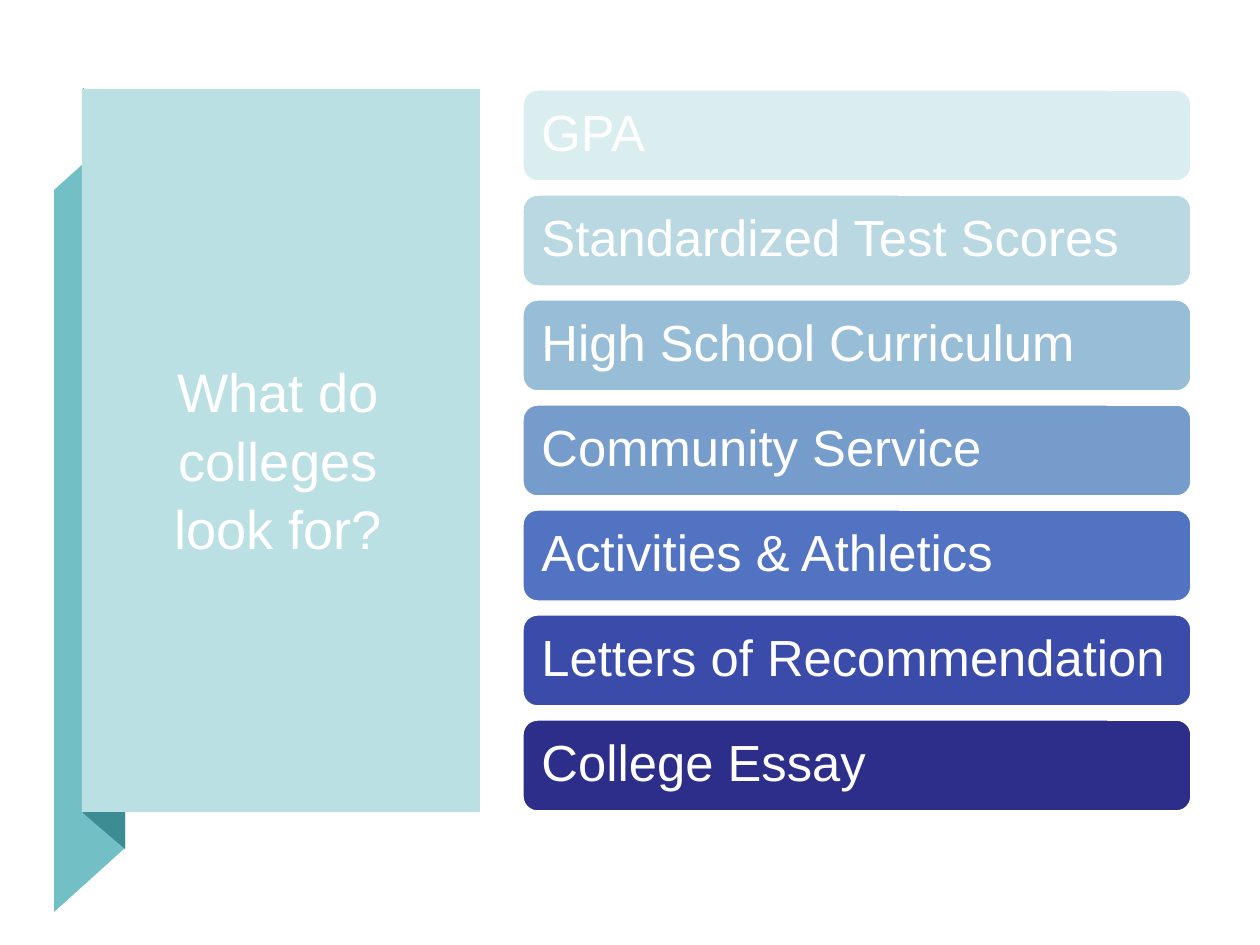
import pptx
import pptx.dml.color
import pptx.enum.shapes
import pptx.enum.text
import pptx.util

PX = 914400 / 126
THEME = {
    "font": "Arial", "title_size": 31, "bar_size": 29,
    "text": "FFFFFF", "panel": "BBE0E3", "ribbon": "72BFC5", "fold": "3C8C93",
    "bars": ["DAEDEF", "B9D8E2", "98BDD6", "759CCB", "5273C1", "3A4BAA", "2D2D8A"],
}
SHAPES = pptx.enum.shapes.MSO_SHAPE
ALIGN = pptx.enum.text.PP_ALIGN


def paint(shape, color, outline=None):
    shape.shadow.inherit = False
    shape.fill.solid()
    shape.fill.fore_color.rgb = pptx.dml.color.RGBColor.from_string(color)
    if outline:
        shape.line.color.rgb = pptx.dml.color.RGBColor.from_string(outline)
        shape.line.width = pptx.util.Pt(2)
    else:
        shape.line.fill.background()


def write(shape, text, size, inset, paragraph_format):
    frame = shape.text_frame
    frame_format = {"word_wrap": True, "vertical_anchor": pptx.enum.text.MSO_ANCHOR.MIDDLE}
    for side in ("left", "right", "top", "bottom"):
        frame_format[f"margin_{side}"] = round(inset * PX)
    for name, value in frame_format.items():
        setattr(frame, name, value)
    paragraph = frame.paragraphs[0]
    for name, value in paragraph_format.items():
        setattr(paragraph, name, value)
    run = paragraph.add_run()
    run.text = text
    for name, value in {"name": THEME["font"], "size": pptx.util.Pt(size)}.items():
        setattr(run.font, name, value)
    run.font.color.rgb = pptx.dml.color.RGBColor.from_string(THEME["text"])


presentation = pptx.Presentation()
presentation.slide_width = round(1260 * PX)
presentation.slide_height = round(945 * PX)
slide = presentation.slides.add_slide(presentation.slide_layouts[6])

# Folded ribbon behind the panel
ribbon_parts = [
    ("ribbon", [(54, 912), (125, 848), (125, 126), (54, 190)]),
    ("fold", [(83, 813), (125, 849), (125, 125), (83, 88)]),
]
for color, points in ribbon_parts:
    builder = slide.shapes.build_freeform(*points[0], scale=PX)
    builder.add_line_segments(points[1:], close=True)
    paint(builder.convert_to_shape(), THEME[color])

# Title panel
panel = slide.shapes.add_shape(SHAPES.RECTANGLE, *[round(v * PX) for v in (82, 89, 398, 723)])
paint(panel, THEME["panel"])
title = slide.shapes.add_textbox(*[round(v * PX) for v in (136, 210, 284, 496)])
write(title, "What do colleges look for?", THEME["title_size"], 12,
      {"alignment": ALIGN.CENTER, "line_spacing": 1.05})

# Stack of criteria bars
criteria = [
    "GPA", "Standardized Test Scores", "High School Curriculum", "Community Service",
    "Activities & Athletics", "Letters of Recommendation", "College Essay",
]
BAR_LEFT, BAR_TOP, BAR_WIDTH, BAR_HEIGHT, BAR_PITCH = 522, 89, 670, 93, 105
for index, (criterion, color) in enumerate(zip(criteria, THEME["bars"])):
    box = (BAR_LEFT, BAR_TOP + index * BAR_PITCH, BAR_WIDTH, BAR_HEIGHT)
    bar = slide.shapes.add_shape(SHAPES.ROUNDED_RECTANGLE, *[round(v * PX) for v in box])
    paint(bar, color, THEME["text"])
    write(bar, criterion, THEME["bar_size"], 15, {"alignment": ALIGN.LEFT, "line_spacing": 0.9})

presentation.save("out.pptx")
